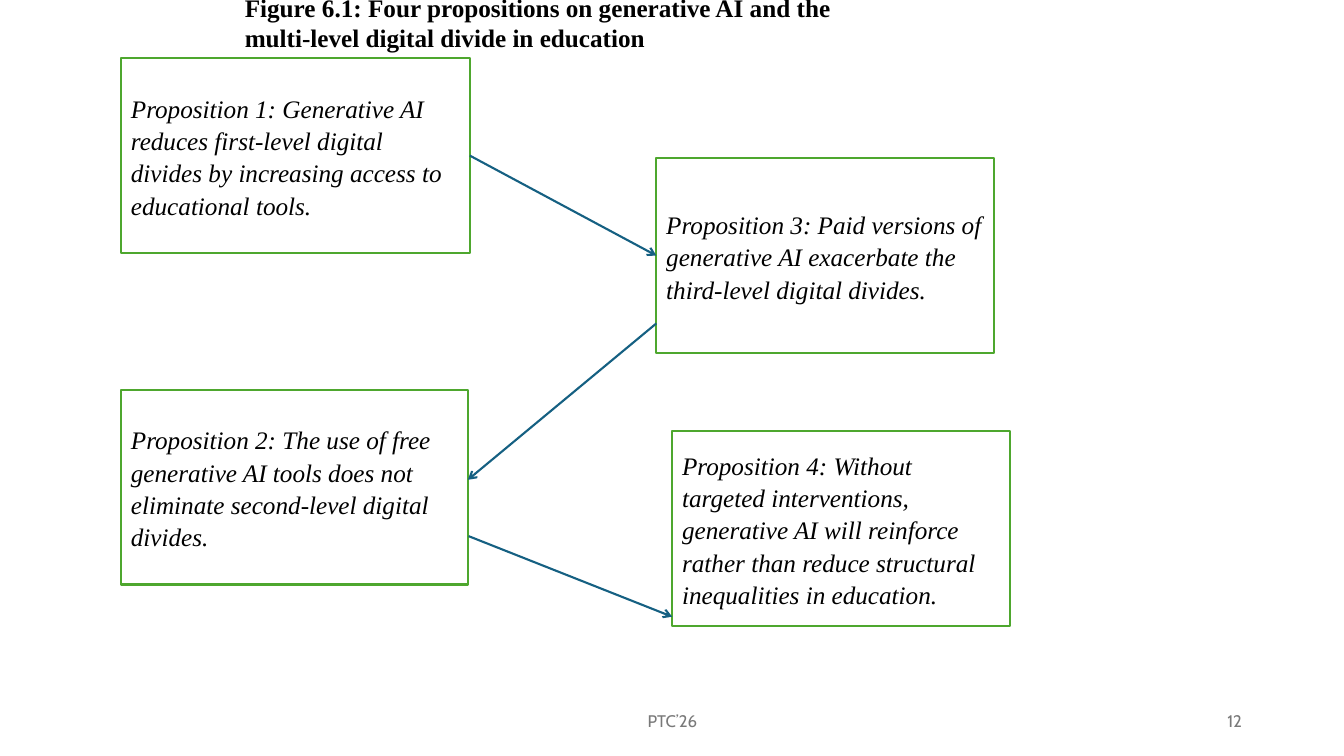
from lxml import etree
from pptx import Presentation
from pptx import util as u
from pptx.dml.color import RGBColor
from pptx.enum import shapes, text
from pptx.oxml.ns import qn

WHITE = RGBColor(0xFF, 0xFF, 0xFF)
BLACK = RGBColor(0x00, 0x00, 0x00)
GREEN = RGBColor(0x4E, 0xA7, 0x2E)
BLUE = RGBColor(0x15, 0x60, 0x82)
GREY = RGBColor(0x79, 0x79, 0x79)
LEFT = text.PP_ALIGN.LEFT
RIGHT_SIDE, LEFT_SIDE = 3, 1


def write_text(shape, content, font="Times New Roman", size=18, color=BLACK,
               bold=False, italic=False, align=LEFT, anchor=text.MSO_ANCHOR.MIDDLE,
               line_spacing=None, space_after=None):
    frame = shape.text_frame
    frame.word_wrap = True
    frame.vertical_anchor = anchor
    paragraph = frame.paragraphs[0]
    paragraph.alignment = align
    paragraph.line_spacing = line_spacing
    paragraph.space_after = space_after
    run = paragraph.add_run()
    run.text = content
    run.font.name = font
    run.font.size = u.Pt(size)
    run.font.color.rgb = color
    run.font.bold = bold
    run.font.italic = italic


class Diagram:
    line_width = u.Pt(1.5)
    box_height = 4.9

    def __init__(self, slide):
        self.slide = slide

    def proposition(self, left, top, width, content):
        shape = self.slide.shapes.add_shape(
            shapes.MSO_SHAPE.RECTANGLE,
            u.Cm(left), u.Cm(top), u.Cm(width), u.Cm(self.box_height))
        shape.shadow.inherit = False
        shape.fill.solid()
        shape.fill.fore_color.rgb = WHITE
        shape.line.color.rgb = GREEN
        shape.line.width = self.line_width
        write_text(shape, content, italic=True, line_spacing=1.07, space_after=u.Pt(8))
        return shape

    def arrow(self, start, end):
        connector = self.slide.shapes.add_connector(
            shapes.MSO_CONNECTOR.STRAIGHT, *(u.Cm(value) for value in start + end))
        connector.line.color.rgb = BLUE
        connector.line.width = self.line_width
        properties = connector._element.spPr
        line = properties.find(qn("a:ln"))
        etree.SubElement(line, qn("a:tailEnd")).set("type", "arrow")
        etree.SubElement(properties, qn("a:effectLst"))
        return connector

    def label(self, left, top, width, height, content, **style):
        shape = self.slide.shapes.add_textbox(
            u.Cm(left), u.Cm(top), u.Cm(width), u.Cm(height))
        write_text(shape, content, **style)


def main():
    presentation = Presentation()
    presentation.slide_width = u.Cm(33.87)
    presentation.slide_height = u.Cm(19.05)
    diagram = Diagram(presentation.slides.add_slide(presentation.slide_layouts[6]))

    access = diagram.proposition(
        3.05, 1.47, 8.79,
        "Proposition 1: Generative AI reduces first-level digital divides "
        "by increasing access to educational tools.")
    paid = diagram.proposition(
        16.54, 3.99, 8.51,
        "Proposition 3: Paid versions of generative AI exacerbate "
        "the third-level digital divides.")
    diagram.proposition(
        3.05, 9.83, 8.74,
        "Proposition 2: The use of free generative AI tools does not "
        "eliminate second-level digital divides.")
    diagram.proposition(
        16.94, 10.87, 8.51,
        "Proposition 4: Without targeted interventions, generative AI will "
        "reinforce rather than reduce structural inequalities in education.")

    access_to_paid = diagram.arrow((11.84, 3.92), (16.54, 6.44))
    access_to_paid.begin_connect(access, RIGHT_SIDE)
    access_to_paid.end_connect(paid, LEFT_SIDE)
    diagram.arrow((16.54, 8.15), (11.79, 12.09))
    diagram.arrow((11.81, 13.51), (16.94, 15.54))

    diagram.label(
        5.92, -0.33, 16.94, 1.8,
        "Figure 6.1: Four propositions on generative AI and the "
        "multi-level digital divide in education",
        bold=True, anchor=text.MSO_ANCHOR.TOP)
    footer = {"font": "Cabin", "size": 12, "color": GREY}
    diagram.label(11.23, 17.65, 11.43, 1.02, "PTC’26",
                  align=text.PP_ALIGN.CENTER, **footer)
    diagram.label(23.93, 17.65, 7.62, 1.02, "12",
                  align=text.PP_ALIGN.RIGHT, **footer)

    presentation.save("out.pptx")


if __name__ == "__main__":
    main()
